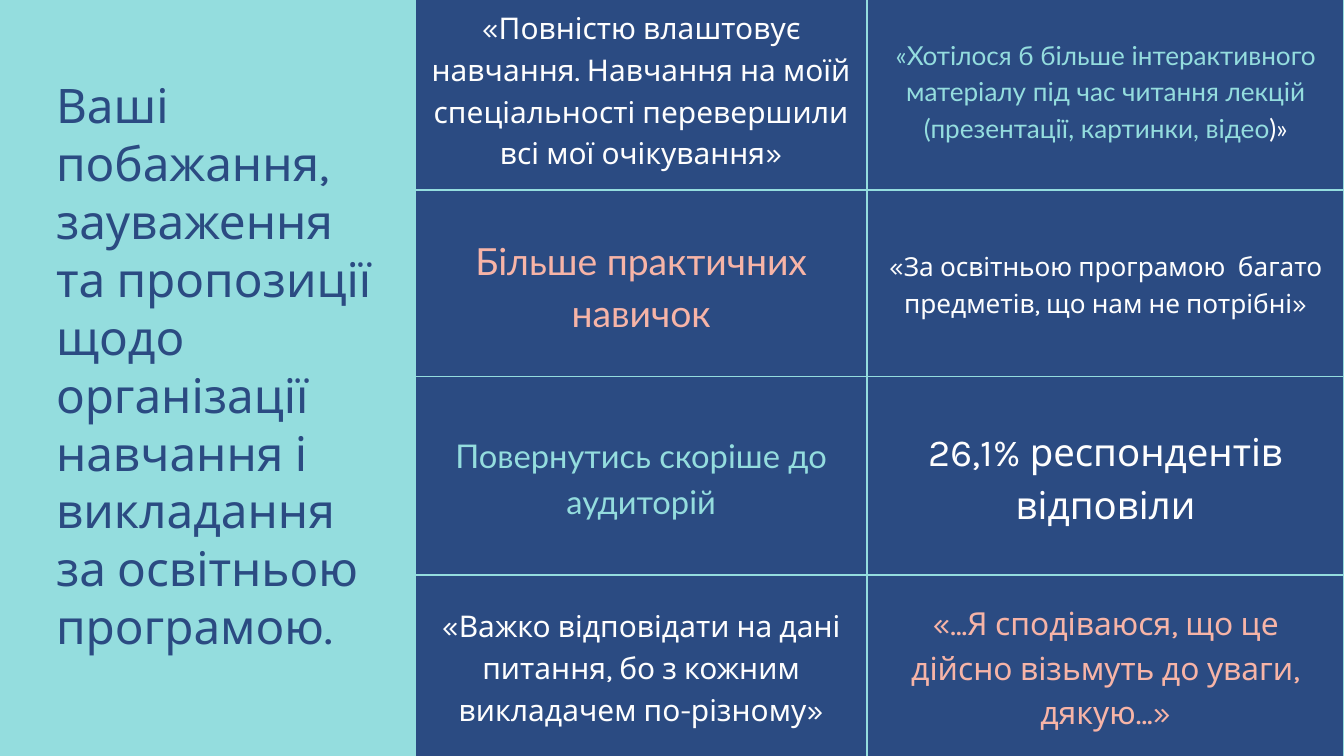
from lxml import etree
from pptx import Presentation
from pptx.dml.color import RGBColor
from pptx.enum.text import MSO_ANCHOR, MSO_AUTO_SIZE, PP_ALIGN
from pptx.oxml.ns import qn
from pptx.util import Emu, Pt

PX = 9525
LEFT, CENTER = PP_ALIGN.LEFT, PP_ALIGN.CENTER
MIDDLE = MSO_ANCHOR.MIDDLE
GROW = MSO_AUTO_SIZE.SHAPE_TO_FIT_TEXT

MINT, NAVY, WHITE, CORAL = "94DDDE", "2B4B82", "FEFEFE", "F7B4A7"
KARLA, LATO = "Karla", "Lato"

QUESTION = (
    "Ваші побажання, зауваження та пропозиції щодо організації "
    "навчання і викладання за освітньою програмою."
)
COLUMN_WIDTHS = [646, 681]
ROW_HEIGHTS = [288, 267, 283, 261]
ANSWERS = [
    [
        (32, KARLA, [("«Повністю влаштовує навчання. Навчання на моїй "
                      "спеціальності перевершили всі мої очікування»", WHITE)]),
        (28, LATO, [("«Хотілося б більше інтерактивного матеріалу під час "
                     "читання лекцій (презентації, картинки, відео", MINT),
                    (")»", WHITE)]),
    ],
    [
        (40, LATO, [("Більше практичних навичок", CORAL)]),
        (28, KARLA, [("«За освітньою програмою  багато предметів, "
                      "що нам не потрібні»", WHITE)]),
    ],
    [
        (35, LATO, [("Повернутись скоріше до аудиторій", MINT)]),
        (41, KARLA, [("26,1% респондентів відповіли", WHITE)]),
    ],
    [
        (32, KARLA, [("«Важко відповідати на дані питання, бо з кожним "
                      "викладачем по-різному»", WHITE)]),
        (34, KARLA, [("«...Я сподіваюся, що це дійсно візьмуть до уваги, "
                      "дякую...»", CORAL)]),
    ],
]


def px(length):
    return Emu(length * PX)


def rgb(value):
    return RGBColor.from_string(value)


def write(frame, runs, *, size, font, spacing, align=LEFT):
    paragraph = frame.paragraphs[0]
    paragraph.alignment = align
    paragraph.line_spacing = Pt(spacing)
    for wording, color in runs:
        run = paragraph.add_run()
        run.text = wording
        run.font.size = Pt(size)
        run.font.name = font
        run.font.bold = False
        run.font.color.rgb = rgb(color)


class SurveySlide:
    """Holds the style and the slide of survey answers."""

    padding = 20
    border_width = 2.25
    leading = 1.4

    def __init__(self, slide, background):
        self.slide = slide
        fill = slide.background.fill
        fill.solid()
        fill.fore_color.rgb = rgb(background)

    def heading(self, left, top, width, height, wording):
        box = self.slide.shapes.add_textbox(*map(px, (left, top, width, height)))
        frame = box.text_frame
        frame.word_wrap = True
        frame.auto_size = GROW
        frame.margin_left = frame.margin_right = 0
        frame.margin_top = frame.margin_bottom = 0
        write(frame, [(wording, NAVY)], size=51, font=KARLA, spacing=62)

    def border(self, cell, color):
        properties = cell._tc.get_or_add_tcPr()
        for side in ("lnL", "lnR", "lnT", "lnB"):
            line = etree.SubElement(properties, qn(f"a:{side}"),
                                    w=str(Pt(self.border_width)))
            fill = etree.SubElement(line, qn("a:solidFill"))
            etree.SubElement(fill, qn("a:srgbClr"), val=color)

    def answer(self, cell, size, font, runs):
        self.border(cell, MINT)
        cell.fill.solid()
        cell.fill.fore_color.rgb = rgb(NAVY)
        cell.margin_left = cell.margin_right = px(self.padding)
        cell.margin_top = cell.margin_bottom = px(self.padding)
        cell.vertical_anchor = MIDDLE
        write(cell.text_frame, runs, size=size, font=font,
              spacing=round(size * self.leading, 1), align=CENTER)

    def answer_table(self, left, top, widths, heights, answers):
        table = self.slide.shapes.add_table(
            len(heights), len(widths),
            *map(px, (left, top, sum(widths), sum(heights)))).table
        table.first_row = table.horz_banding = False
        for column, width in zip(table.columns, widths):
            column.width = px(width)
        for row, height, row_answers in zip(table.rows, heights, answers):
            row.height = px(height)
            for cell, content in zip(row.cells, row_answers):
                self.answer(cell, *content)


def main():
    deck = Presentation()
    deck.slide_width, deck.slide_height = px(1920), px(1080)
    survey = SurveySlide(deck.slides.add_slide(deck.slide_layouts[6]), MINT)
    survey.answer_table(593, -17, COLUMN_WIDTHS, ROW_HEIGHTS, ANSWERS)
    survey.heading(80, 108, 478, 830, QUESTION)
    deck.save("out.pptx")


if __name__ == "__main__":
    main()
